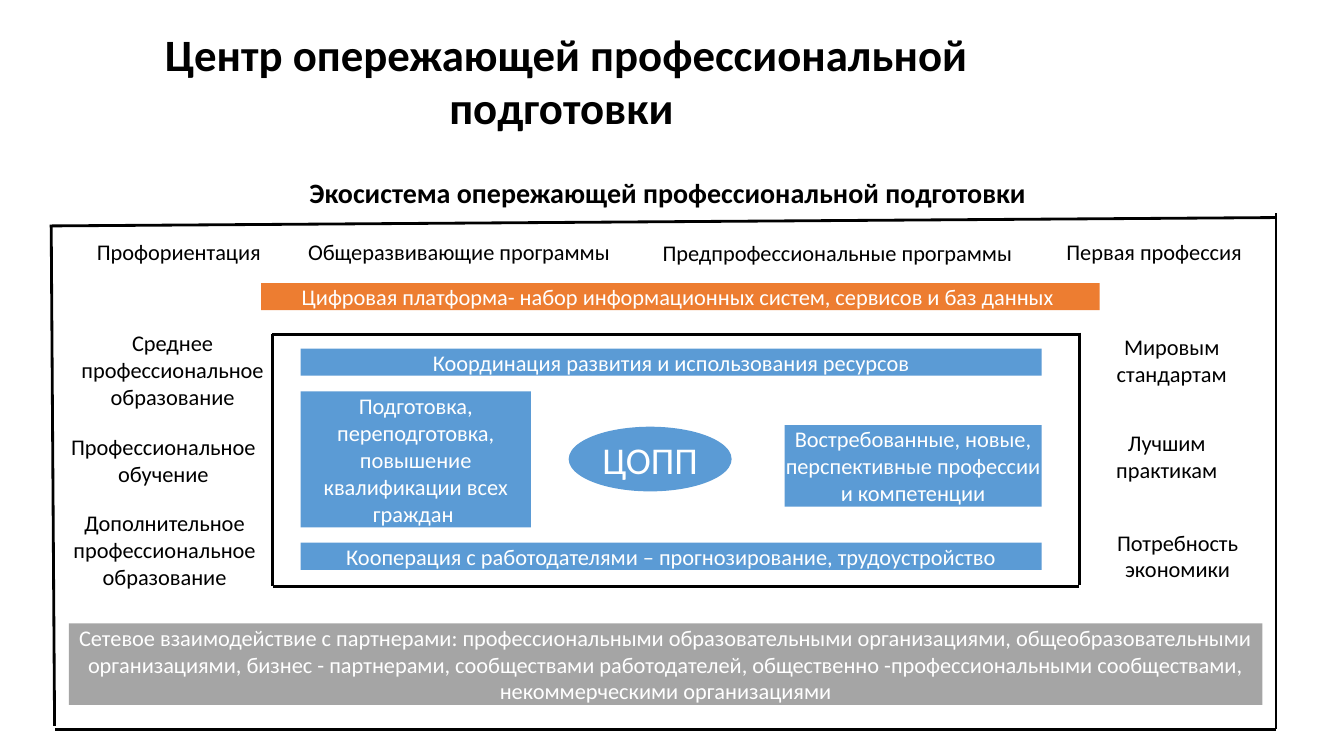
from lxml.etree import SubElement
from pptx import Presentation
from pptx.dml.color import RGBColor
from pptx.enum.shapes import MSO_CONNECTOR, MSO_SHAPE
from pptx.enum.text import MSO_ANCHOR, MSO_AUTO_SIZE, PP_ALIGN
from pptx.oxml.ns import qn
from pptx.util import Inches, Pt

WIDTH, HEIGHT = Inches(13.33), Inches(7.5)
COLUMN, ROW = WIDTH / 160, HEIGHT / 90
LINE = 3.24
BLACK, WHITE, BLUE, ORANGE, GRAY = "000000", "FFFFFF", "5B9BD5", "ED7D31", "A5A5A5"


def color(value):
    return RGBColor.from_string(value)


def on_grid(column, row):
    return round(column * COLUMN), round(row * ROW)


def add_text(slide, text, box, fill=None, ink=BLACK, size=16, bold=False,
             outline=MSO_SHAPE.RECTANGLE, anchor=MSO_ANCHOR.MIDDLE, inset=0):
    place = on_grid(*box[:2]) + on_grid(*box[2:])
    if fill:
        part = slide.shapes.add_shape(outline, *place)
        part.shadow.inherit = False
        part.fill.solid()
        part.fill.fore_color.rgb = color(fill)
        part.line.fill.background()
    else:
        part = slide.shapes.add_textbox(*place)
    frame = part.text_frame
    frame.word_wrap = True
    frame.auto_size = MSO_AUTO_SIZE.SHAPE_TO_FIT_TEXT
    frame.vertical_anchor = anchor
    frame.margin_left = frame.margin_right = Inches(inset)
    frame.margin_top = frame.margin_bottom = Inches(inset)
    paragraph = frame.paragraphs[0]
    paragraph.alignment = PP_ALIGN.CENTER
    run = paragraph.add_run()
    run.text = text
    run.font.name = "Calibri"
    run.font.size = Pt(size)
    run.font.bold = bold
    run.font.color.rgb = color(ink)


def add_labels(slide, box, labels, **style):
    left, top = box
    for text, column, row, width, lines in labels:
        add_text(slide, text, (left + column, top + row, width, lines * LINE), **style)


def add_border(slide, box, edges):
    left, top = box
    for x1, y1, x2, y2 in edges:
        edge = slide.shapes.add_connector(
            MSO_CONNECTOR.STRAIGHT,
            *on_grid(left + x1, top + y1), *on_grid(left + x2, top + y2))
        edge.line.color.rgb = color(BLACK)
        edge.line.width = Pt(2)
        SubElement(edge._element.spPr, qn("a:effectLst"))


def add_headings(slide, box):
    left, top = box
    add_text(slide, "Центр опережающей профессиональной подготовки ",
             (left, top, 124.3, 14.6), fill=WHITE, size=32, bold=True,
             anchor=MSO_ANCHOR.TOP, inset=0.07)
    add_text(slide, "Экосистема опережающей профессиональной подготовки",
             (left + 25.2, top + 18.5, 98, 4.1), size=20, bold=True)


def add_ecosystem(slide, box):
    left, top = box
    add_border(slide, box, [
        (-0.1, 0.9, 145.9, -0.1),
        (0.6, 60.8, 145.9, 60.8),
        (145.9, -0.6, 145.9, 60.8),
        (0.1, 1, 0.5, 60.4),
    ])
    add_labels(slide, (left + 3.6, top + 2.3), [
        ("Профориентация", 0, 0, 23.4, 1),
        ("Общеразвивающие программы", 25, 0, 40.1, 1),
        ("Предпрофессиональные программы", 66.6, 0.1, 47, 1),
        ("Первая профессия", 115.1, 0, 25.4, 1),
    ])
    add_labels(slide, (left + 2.4, top + 13.1), [
        ("Среднее профессиональное образование", 1.1, 0, 22.1, 3),
        ("Профессиональное обучение", 0, 12.4, 22.1, 2),
        ("Дополнительное профессиональное образование", 0, 21.5, 22.4, 3),
    ])
    add_labels(slide, (left + 124.8, top + 13.6), [
        ("Мировым стандартам", 0, 0, 17.4, 2),
        ("Лучшим практикам", 1.3, 11.5, 13.6, 2),
        ("Потребность экономики", 0.7, 23.3, 17.4, 2),
    ])
    add_labels(slide, box, [
        ("Цифровая платформа- набор информационных систем, сервисов и баз данных ",
         25.1, 7.7, 99.8, 1),
    ], fill=ORANGE, ink=WHITE)
    add_labels(slide, box, [
        ("Сетевое взаимодействие с партнерами: профессиональными образовательными "
         "организациями, общеобразовательными организациями, бизнес - партнерами, "
         "сообществами работодателей, общественно -профессиональными сообществами, "
         "некоммерческими организациями", 2.2, 48.2, 142.1, 3),
    ], fill=GRAY, ink=WHITE)


def add_center(slide, box):
    left, top = box
    add_border(slide, box, [
        (0, 0, 96.1, 0),
        (0.1, 30, 96.1, 30),
        (0, 0, 0, 30),
        (96.1, -0.2, 96.1, 29.9),
    ])
    add_labels(slide, (left + 3.4, top + 1.7), [
        ("Координация развития и использования ресурсов", 0, 0, 88.2, 1),
        ("Подготовка, переподготовка, повышение квалификации всех граждан ",
         0, 5.1, 27.4, 5),
        ("Востребованные, новые, перспективные профессии и компетенции",
         57.6, 9.1, 30.6, 3),
        ("Кооперация с работодателями – прогнозирование, трудоустройство",
         0, 23.1, 88.2, 1),
    ], fill=BLUE, ink=WHITE)
    add_text(slide, "ЦОПП", (left + 35.3, top + 11, 19.4, 7.7), fill=BLUE,
             ink=WHITE, size=27, outline=MSO_SHAPE.OVAL)


def main():
    deck = Presentation()
    deck.slide_width, deck.slide_height = WIDTH, HEIGHT
    slide = deck.slides.add_slide(deck.slide_layouts[6])
    add_headings(slide, (5.3, 2.3))
    add_ecosystem(slide, (6, 26))
    add_center(slide, (32.4, 39.8))
    deck.save("out.pptx")


if __name__ == "__main__":
    main()
